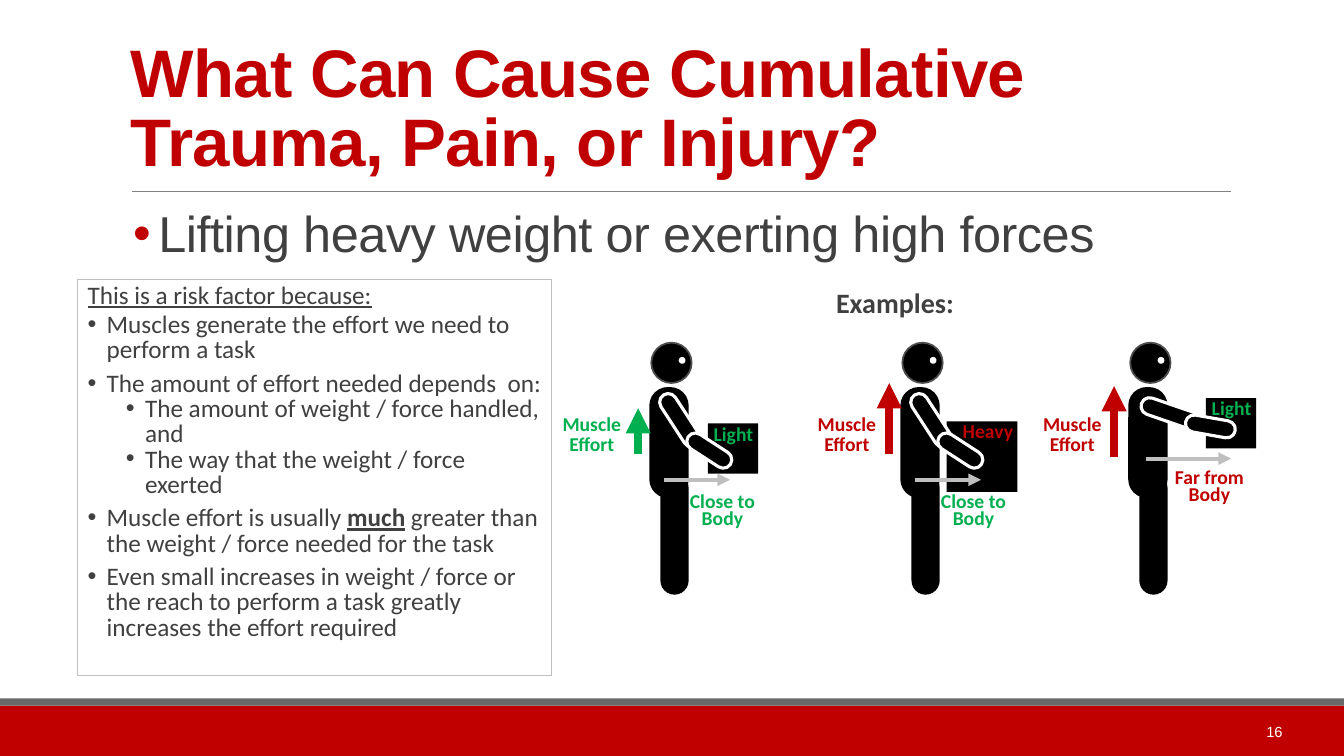
from lxml import etree
from pptx import Presentation, util as u
from pptx.dml.color import RGBColor
from pptx.enum import shapes, text
from pptx.oxml.ns import qn

PX = 9144  # 100 px to the inch
RED = RGBColor(0xC0, 0x00, 0x00)
GREEN = RGBColor(0x00, 0xB0, 0x50)
BLACK = RGBColor(0x00, 0x00, 0x00)
WHITE = RGBColor(0xFF, 0xFF, 0xFF)
INK = RGBColor(0x40, 0x40, 0x40)
SLATE = RGBColor(0x69, 0x69, 0x69)
GREY = RGBColor(0x80, 0x80, 0x80)
PALE = RGBColor(0xBF, 0xBF, 0xBF)
RIM = RGBColor(0x4E, 0x4E, 0x4E)

KIND = shapes.MSO_SHAPE
MID = text.MSO_ANCHOR.MIDDLE
LEFT, CENTER, RIGHT = text.PP_ALIGN.LEFT, text.PP_ALIGN.CENTER, text.PP_ALIGN.RIGHT

# Level, space after, runs as (words, bold, underlined)
RISKS = [
    (0, 3, [("This is a risk factor because:", False, True)]),
    (1, 6, [("Muscles generate the effort we need to perform a task", False, False)]),
    (1, 0, [("The amount of effort needed depends  on:", False, False)]),
    (2, 0, [("The amount of weight / force handled, and", False, False)]),
    (2, 6, [("The way that the weight / force exerted", False, False)]),
    (1, 6, [("Muscle effort is usually ", False, False), ("much", True, True),
            (" greater than the weight / force needed for the task", False, False)]),
    (1, 0, [("Even small increases in weight / force or the reach to perform a "
             "task greatly increases the effort required", False, False)]),
]

# Arms as (left, top, length, turn)
BENT = [(22, 47, 60, 327), (51, 82, 50, 303)]
STRAIGHT = [(33, 40, 60, 289), (73, 58, 50, 280)]

# All places are relative to the left of the torso and the top of the head
LIFTS = [
    dict(left=1119, arms=STRAIGHT, load=(77, 55, 50), name=("Light", 73, 52, 60, GREEN),
         effort=(-113, 115, RED), pull=(-14, 113, 43), reach=(18, 102, 115),
         note=("Far from Body", 33, 123, RED)),
    dict(left=893, arms=BENT, load=(46, 78, 70), name=("Heavy", 52, 75, 81, RED),
         effort=(-96, 86, RED), pull=(-11, 110, 40), reach=(15, 80, 136),
         note=("Close to Body", 25, 147, GREEN)),
    dict(left=644, arms=BENT, load=(58, 80, 50), name=("Light", 54, 78, 60, GREEN),
         effort=(-100, 86, GREEN), pull=(-11, 110, 65), reach=(15, 80, 136),
         note=("Close to Body", 25, 147, GREEN)),
]


def block(slide, kind, x, y, w, h, fill=None, line=None, width=1.25, turn=0, bend=None):
    shape = slide.shapes.add_shape(kind, x * PX, y * PX, w * PX, h * PX)
    shape.shadow.inherit = False
    shape.rotation = turn
    if bend is not None:
        shape.adjustments[0] = bend
    if fill is None:
        shape.fill.background()
    else:
        shape.fill.solid()
        shape.fill.fore_color.rgb = fill
    if line is None:
        shape.line.fill.background()
    else:
        shape.line.color.rgb = line
        shape.line.width = u.Pt(width)
    return shape


def rule(slide, x1, y1, x2, y2, color, width, arrow=False):
    line = slide.shapes.add_connector(
        shapes.MSO_CONNECTOR.STRAIGHT, x1 * PX, y1 * PX, x2 * PX, y2 * PX)
    line.line.color.rgb = color
    line.line.width = u.Pt(width)
    props = line.element.spPr
    if arrow:
        etree.SubElement(props.find(qn("a:ln")), qn("a:tailEnd"), type="triangle")
    etree.SubElement(props, qn("a:effectLst"))


def style(run, size, color, font="Calibri", bold=False, space=0):
    run.font.size = u.Pt(size)
    run.font.name = font
    run.font.bold = bold
    run.font.color.rgb = color
    if space:
        run.font._element.set("spc", str(space))


def label(slide, words, x, y, w, h, size, color, font="Calibri", bold=False,
          align=LEFT, lead=None, space=0, wrap=True):
    box = slide.shapes.add_textbox(x * PX, y * PX, w * PX, h * PX)
    frame = box.text_frame
    frame.word_wrap = wrap
    frame.text = words
    para = frame.paragraphs[0]
    para.alignment = align
    para.line_spacing = lead
    style(para.runs[0], size, color, font, bold, space)
    return frame


def bullet(para, left, hang, color=None):
    props = para._p.get_or_add_pPr()
    props.set("marL", str(left * PX))
    props.set("indent", str(-hang * PX))
    if color is not None:
        tint = etree.SubElement(props, qn("a:buClr"))
        etree.SubElement(tint, qn("a:srgbClr"), val=str(color))
    etree.SubElement(props, qn("a:buFont"), typeface="Arial")
    etree.SubElement(props, qn("a:buChar"), char="•")


def footer(slide, x, y, w, h):
    block(slide, KIND.RECTANGLE, x, y + 7, w, h - 7, RED)
    block(slide, KIND.RECTANGLE, x, y, w, 7, SLATE)
    page = label(slide, "16", x + 1139, y + 13, 143, 40, 10.5, WHITE, "Arial", align=RIGHT)
    page.vertical_anchor = MID


def header(slide, x, y, w, h):
    rule(slide, x + 11, y + h, x + w + 1, y + h, GREY, 0.5)
    title = label(slide, "What Can Cause Cumulative Trauma, Pain, or Injury?",
                  x, y, w, h, 48, RED, "Arial", True, lead=0.85, space=-50)
    title.vertical_anchor = MID


def topic(slide, x, y, w, h):
    frame = label(slide, "Lifting heavy weight or exerting high forces",
                  x, y, w, h, 36, INK, "Arial", lead=0.9, space=-30)
    frame.margin_left = frame.margin_right = 0
    para = frame.paragraphs[0]
    para.space_before, para.space_after = u.Pt(12), u.Pt(2)
    bullet(para, 37, 25, RED)


def risks(slide, x, y, w, h):
    frame = block(slide, KIND.RECTANGLE, x, y, w, h, line=PALE, width=0.75).text_frame
    frame.word_wrap = True
    frame.vertical_anchor = text.MSO_ANCHOR.TOP
    for i, (level, after, runs) in enumerate(RISKS):
        para = frame.add_paragraph() if i else frame.paragraphs[0]
        para.alignment = LEFT
        para.line_spacing = u.Pt(18)
        para.space_after = u.Pt(after)
        if level:
            para.level = level - 1
            bullet(para, 19 if level == 1 else 57, 19)
        for words, bold, under in runs:
            run = para.add_run()
            run.text = words
            style(run, 18, INK, bold=bold)
            run.font.underline = under


def lifter(slide, x, y, arms, load, name, effort, pull, reach, note):
    # Load and body
    dx, dy, side = load
    block(slide, KIND.RECTANGLE, x + dx, y + dy, side, side, BLACK)
    block(slide, KIND.ROUNDED_RECTANGLE, x + 11, y + 130, 28, 120, BLACK, bend=0.5)
    block(slide, KIND.ROUNDED_RECTANGLE, x, y + 44, 39, 110, BLACK, bend=0.47)
    block(slide, KIND.OVAL, x + 2, y, 40, 40, BLACK, RIM)
    block(slide, KIND.OVAL, x + 30, y + 15, 5, 5, WHITE, WHITE)
    for dx, dy, size, turn in arms:
        block(slide, KIND.ROUNDED_RECTANGLE, x + dx, y + dy, 17, size, BLACK, WHITE,
              2.25, turn, 0.5)
    # Arrows
    dx, start, end = pull
    rule(slide, x + dx, y + start, x + dx, y + end, effort[2], 6, True)
    start, end, dy = reach
    rule(slide, x + start, y + dy, x + end, y + dy, PALE, 3, True)
    # Labels
    words, dx, dy, w, color = name
    label(slide, words, x + dx, y + dy, w, 30, 14, color, bold=True, lead=u.Pt(14))
    dx, w, color = effort
    label(slide, "Muscle Effort", x + dx, y + 68, w, 50, 14, color, bold=True,
          align=CENTER, lead=u.Pt(14))
    words, dx, dy, color = note
    label(slide, words, x + dx, y + dy, 95, 44, 14, color, bold=True,
          align=CENTER, lead=u.Pt(12))


def samples(slide, y):
    label(slide, "Examples:", 818, y, 138, 44, 20, INK, bold=True, align=RIGHT, wrap=False)
    for lift in LIFTS:
        parts = {key: part for key, part in lift.items() if key != "left"}
        lifter(slide, lift["left"], y + 62, **parts)


def main():
    deck = Presentation()
    deck.slide_width, deck.slide_height = 1333 * PX, 750 * PX
    slide = deck.slides.add_slide(deck.slide_layouts[6])
    footer(slide, 0, 693, 1333, 57)
    header(slide, 120, 31, 1100, 159)
    topic(slide, 120, 202, 1205, 440)
    risks(slide, 77, 277, 470, 393)
    samples(slide, 278)
    deck.save("out.pptx")


if __name__ == "__main__":
    main()
